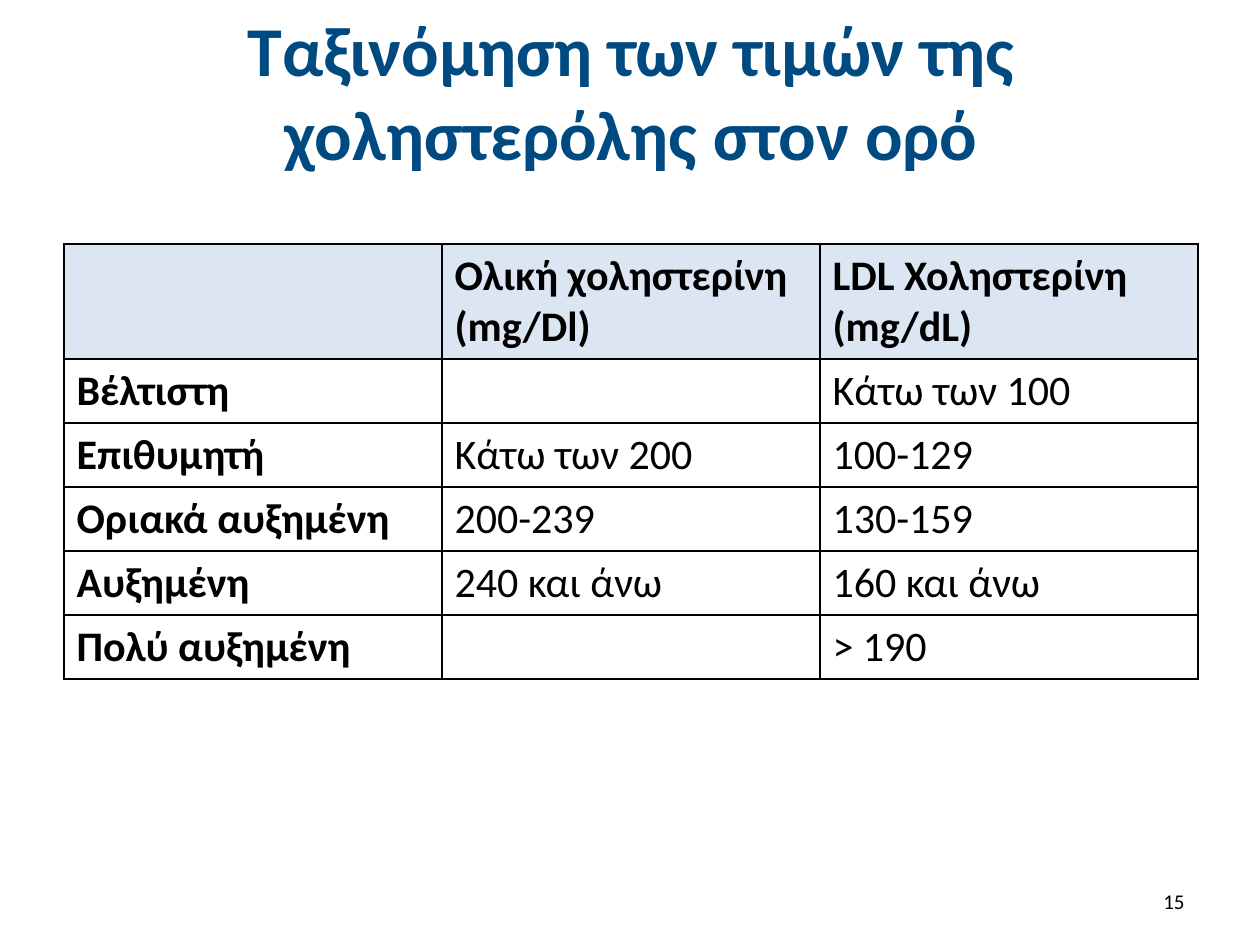
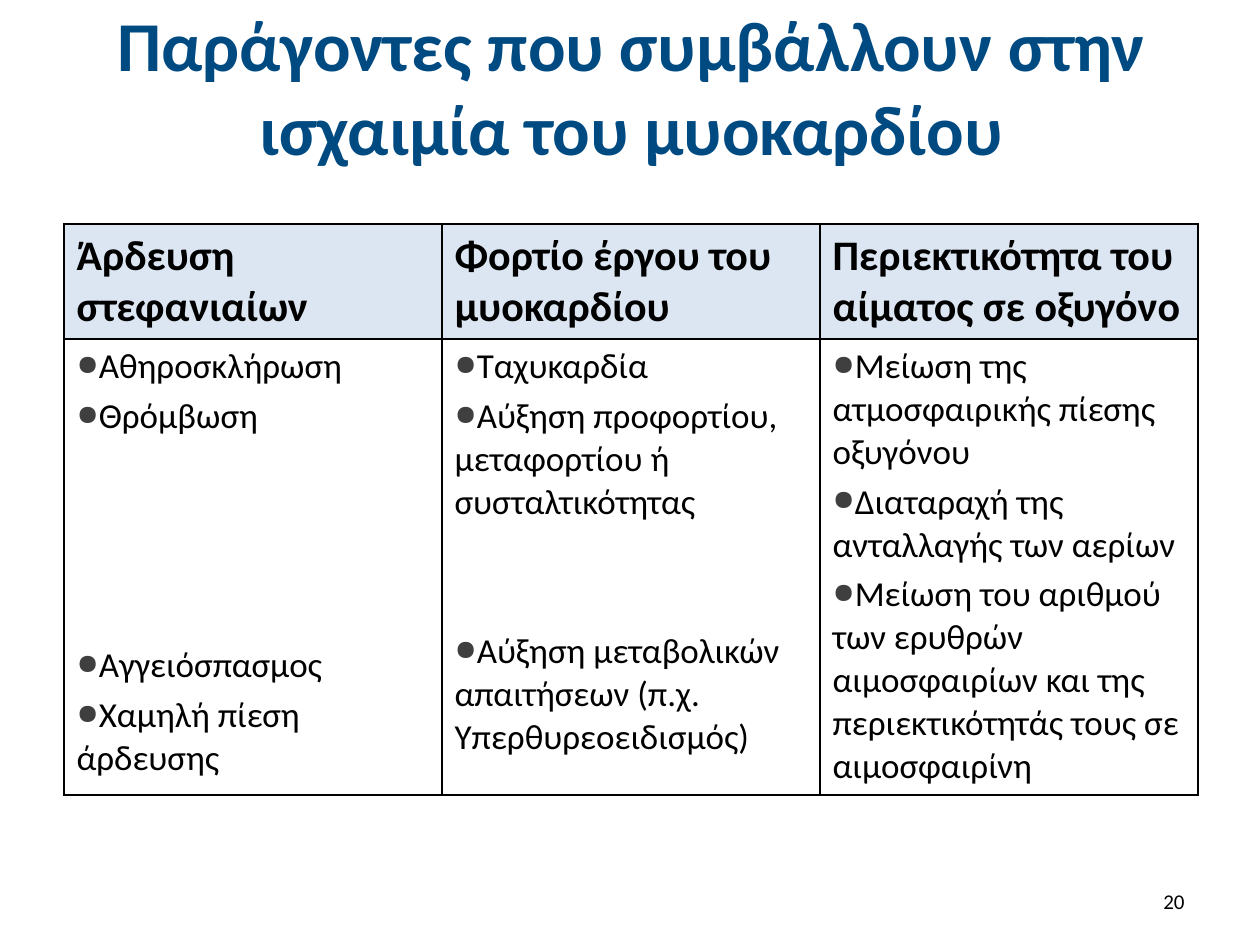
"""Builds two slides with tables about cholesterol and myocardial ischaemia."""
from lxml.etree import SubElement
from pptx import Presentation
from pptx.dml.color import RGBColor
from pptx.enum.text import MSO_ANCHOR, PP_ALIGN
from pptx.oxml import parse_xml
from pptx.oxml.ns import nsdecls, qn
from pptx.util import Emu, Pt

PX_PER_INCH = 126
FONT = "Calibri"
TITLE_BLUE = RGBColor(0x00, 0x4A, 0x82)
HEADER_BLUE = RGBColor(0xDC, 0xE6, 0xF2)
BULLET_GREY = RGBColor(0x3F, 0x3F, 0x3F)
BLACK = RGBColor(0x00, 0x00, 0x00)
WHITE = RGBColor(0xFF, 0xFF, 0xFF)
LEFT, WIDTH = 64, 1134
HEADER_HEIGHT = 115

CHOLESTEROL = [
    ["", "Ολική χοληστερίνη (mg/Dl)", "LDL Χοληστερίνη (mg/dL)"],
    ["Βέλτιστη", "", "Κάτω των 100"],
    ["Επιθυμητή", "Κάτω των 200", "100-129"],
    ["Οριακά αυξημένη", "200-239", "130-159"],
    ["Αυξημένη", "240 και άνω", "160 και άνω"],
    ["Πολύ αυξημένη", "", "> 190"],
]
FACTOR_HEADERS = ["Άρδευση στεφανιαίων", "Φορτίο έργου του μυοκαρδίου",
                  "Περιεκτικότητα του αίματος σε οξυγόνο"]
FACTORS = [
    [("Αθηροσκλήρωση", 4), ("Θρόμβωση", 4), ("Αγγειόσπασμος", 118),
     ("Χαμηλή πίεση άρδευσης", 4)],
    [("Ταχυκαρδία", 4), ("Αύξηση προφορτίου, μεταφορτίου ή συσταλτικότητας", 4),
     ("Αύξηση μεταβολικών απαιτήσεων (π.χ. Υπερθυρεοειδισμός)", 61)],
    [("Μείωση της ατμοσφαιρικής πίεσης οξυγόνου", 4),
     ("Διαταραχή της ανταλλαγής των αερίων", 4),
     ("Μείωση του αριθμού των ερυθρών αιμοσφαιρίων και της "
      "περιεκτικότητάς τους σε αιμοσφαιρίνη", 4)],
]


def px(n):
    return Emu(round(n * 914400 / PX_PER_INCH))


class Deck:
    def __init__(self):
        self.prs = Presentation()
        self.prs.slide_width, self.prs.slide_height = px(1260), px(945)
        self.s = None

    def slide(self, title, title_height, number):
        self.s = self.prs.slides.add_slide(self.prs.slide_layouts[6])
        self.text(title, (LEFT, 16, WIDTH, title_height), 40, TITLE_BLUE, True,
                  PP_ALIGN.CENTER)
        self.text(number, (903, 876, 294, 50), 12, BLACK, False, PP_ALIGN.RIGHT)

    def style(self, p, size, color=BLACK, bold=False):
        for r in p.runs:
            r.font.name, r.font.size, r.font.bold = FONT, Pt(size), bold
            r.font.color.rgb = color

    def text(self, text, box, size, color, bold, align):
        tf = self.s.shapes.add_textbox(*map(px, box)).text_frame
        tf.word_wrap = True
        tf.vertical_anchor = MSO_ANCHOR.MIDDLE
        tf.text = text
        p = tf.paragraphs[0]
        p.alignment = align
        self.style(p, size, color, bold)

    def table(self, top, heights, columns):
        shape = self.s.shapes.add_table(len(heights), columns, px(LEFT), px(top),
                                        px(WIDTH), px(sum(heights)))
        table = shape.table
        table.first_row = table.horz_banding = False
        for row, height in zip(table.rows, heights):
            row.height = px(height)
        for i, cell in enumerate(table.iter_cells()):
            cell.fill.solid()
            cell.fill.fore_color.rgb = HEADER_BLUE if i < columns else WHITE
            self.borders(cell)
        return table

    def borders(self, cell):
        tcPr = cell._tc.get_or_add_tcPr()
        for i, side in enumerate("LRTB"):
            tcPr.insert(i, parse_xml(
                f'<a:ln{side} {nsdecls("a")} w="12700"><a:solidFill>'
                f'<a:srgbClr val="{BLACK}"/></a:solidFill></a:ln{side}>'))

    def cell(self, cell, text, bold=False):
        cell.text_frame.text = text
        self.style(cell.text_frame.paragraphs[0], 24, bold=bold)

    def bullets(self, cell, items):
        tf = cell.text_frame
        for i, (text, gap) in enumerate(items):
            p = tf.add_paragraph() if i else tf.paragraphs[0]
            p.text = text
            p.space_before = Pt(gap)
            self.style(p, 20)
            pPr = p._p.get_or_add_pPr()
            color = SubElement(pPr, qn("a:buClr"))
            SubElement(color, qn("a:srgbClr"), val=str(BULLET_GREY))
            SubElement(pPr, qn("a:buSzPct"), val="80000")
            SubElement(pPr, qn("a:buChar"), char="●")


def main():
    deck = Deck()

    deck.slide("Ταξινόμηση των τιμών της χοληστερόλης στον ορό", 149, "15")
    table = deck.table(244, [HEADER_HEIGHT] + [64] * 5, 3)
    for i, row in enumerate(CHOLESTEROL):
        for j, text in enumerate(row):
            deck.cell(table.cell(i, j), text, bold=i == 0 or j == 0)

    deck.slide("Παράγοντες που συμβάλλουν στην ισχαιμία του μυοκαρδίου", 139, "20")
    table = deck.table(224, [HEADER_HEIGHT, 456], 3)
    for j, (header, items) in enumerate(zip(FACTOR_HEADERS, FACTORS)):
        deck.cell(table.cell(0, j), header, bold=True)
        deck.bullets(table.cell(1, j), items)

    deck.prs.save("out.pptx")


if __name__ == "__main__":
    main()
